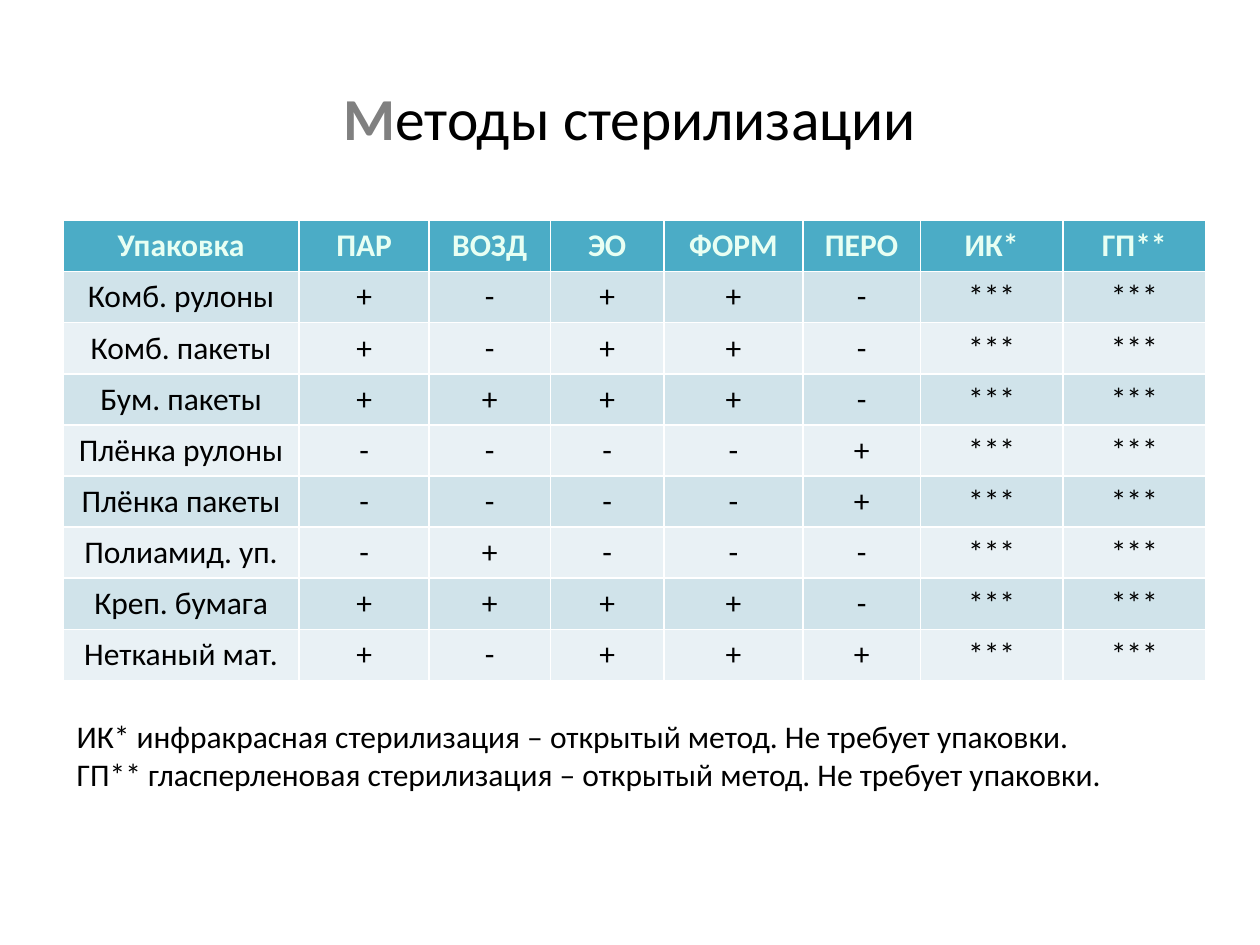
from collections import namedtuple
from dataclasses import dataclass

from pptx import Presentation
from pptx.dml.color import RGBColor
from pptx.enum.text import MSO_ANCHOR, PP_ALIGN
from pptx.util import Inches, Pt

Box = namedtuple("Box", "left top width height")


@dataclass(frozen=True)
class Theme:
    font: str = "Calibri"
    title_size: int = 34
    body_size: int = 18
    background: str = "FFFFFF"
    text: str = "000000"
    initial: str = "808080"
    header_text: str = "E8FFF3"
    header_fill: str = "4BACC6"
    bands: tuple = ("D0E3EA", "E9F1F5")


THEME = Theme()
SLIDE_W, SLIDE_H = 10, 7.5

HEADER = ["Упаковка", "ПАР", "ВОЗД", "ЭО", "ФОРМ", "ПЕРО", "ИК*", "ГП**"]
COL_WIDTHS = [1.87, 1.03, 0.96, 0.9, 1.1, 0.93, 1.13, 1.13]
# One mark for each of the five packed methods
PACKAGING = {
    "Комб. рулоны": "+-++-",
    "Комб. пакеты": "+-++-",
    "Бум. пакеты": "++++-",
    "Плёнка рулоны": "----+",
    "Плёнка пакеты": "----+",
    "Полиамид. уп.": "-+---",
    "Креп. бумага": "++++-",
    "Нетканый мат.": "+-+++",
}
OPEN_METHODS = ["***", "***"]
NOTES = [
    "ИК* инфракрасная стерилизация – открытый метод. Не требует упаковки.",
    "ГП** гласперленовая стерилизация – открытый метод. Не требует упаковки.",
]


def share(x, y, w, h):
    """Box from shares of the slide's width and height."""
    return Box(*(Inches(round(part * side, 2)) for part, side in
                 zip((x, y, w, h), (SLIDE_W, SLIDE_H) * 2)))


def add_run(p, text, size=THEME.body_size, color=THEME.text, bold=False):
    r = p.add_run()
    r.text = text
    for name, value in dict(name=THEME.font, size=Pt(size), bold=bold).items():
        setattr(r.font, name, value)
    r.font.color.rgb = RGBColor.from_string(color)


def add_title(s, box):
    sp = s.shapes.title
    for name, value in box._asdict().items():
        setattr(sp, name, value)
    tf = sp.text_frame
    tf.vertical_anchor = MSO_ANCHOR.MIDDLE
    p = tf.paragraphs[0]
    p.alignment = PP_ALIGN.CENTER
    add_run(p, "М", THEME.title_size, THEME.initial, True)
    add_run(p, "етоды стерилизации", THEME.title_size)


def add_methods_table(s, box):
    rows = [HEADER] + [[name, *marks, *OPEN_METHODS]
                       for name, marks in PACKAGING.items()]
    table = s.shapes.add_table(len(rows), len(HEADER), *box).table
    # Column widths share out the width of the box
    for col, width in zip(table.columns, COL_WIDTHS):
        col.width = int(box.width * width / sum(COL_WIDTHS))
    for i, values in enumerate(rows):
        header = i == 0
        fill = THEME.header_fill if header else THEME.bands[(i - 1) % 2]
        color = THEME.header_text if header else THEME.text
        for cell, value in zip(table.rows[i].cells, values):
            cell.fill.solid()
            cell.fill.fore_color.rgb = RGBColor.from_string(fill)
            p = cell.text_frame.paragraphs[0]
            p.alignment = PP_ALIGN.CENTER
            add_run(p, value, color=color, bold=header)


def add_notes(s, box):
    tf = s.shapes.add_textbox(*box).text_frame
    tf.word_wrap = True
    for i, note in enumerate(NOTES):
        p = tf.add_paragraph() if i else tf.paragraphs[0]
        add_run(p, note)


def main():
    prs = Presentation()
    prs.slide_width, prs.slide_height = Inches(SLIDE_W), Inches(SLIDE_H)
    s = prs.slides.add_slide(prs.slide_layouts.get_by_name("Title Only"))
    s.background.fill.solid()
    s.background.fill.fore_color.rgb = RGBColor.from_string(THEME.background)

    # Heading, table of methods, footnotes
    add_title(s, share(0.05, 0.04, 0.9, 1 / 6))
    add_methods_table(s, share(0.05, 0.233, 0.907, 0.487))
    add_notes(s, share(0.051, 0.752, 0.906, 0.095))
    prs.save("out.pptx")


if __name__ == "__main__":
    main()
